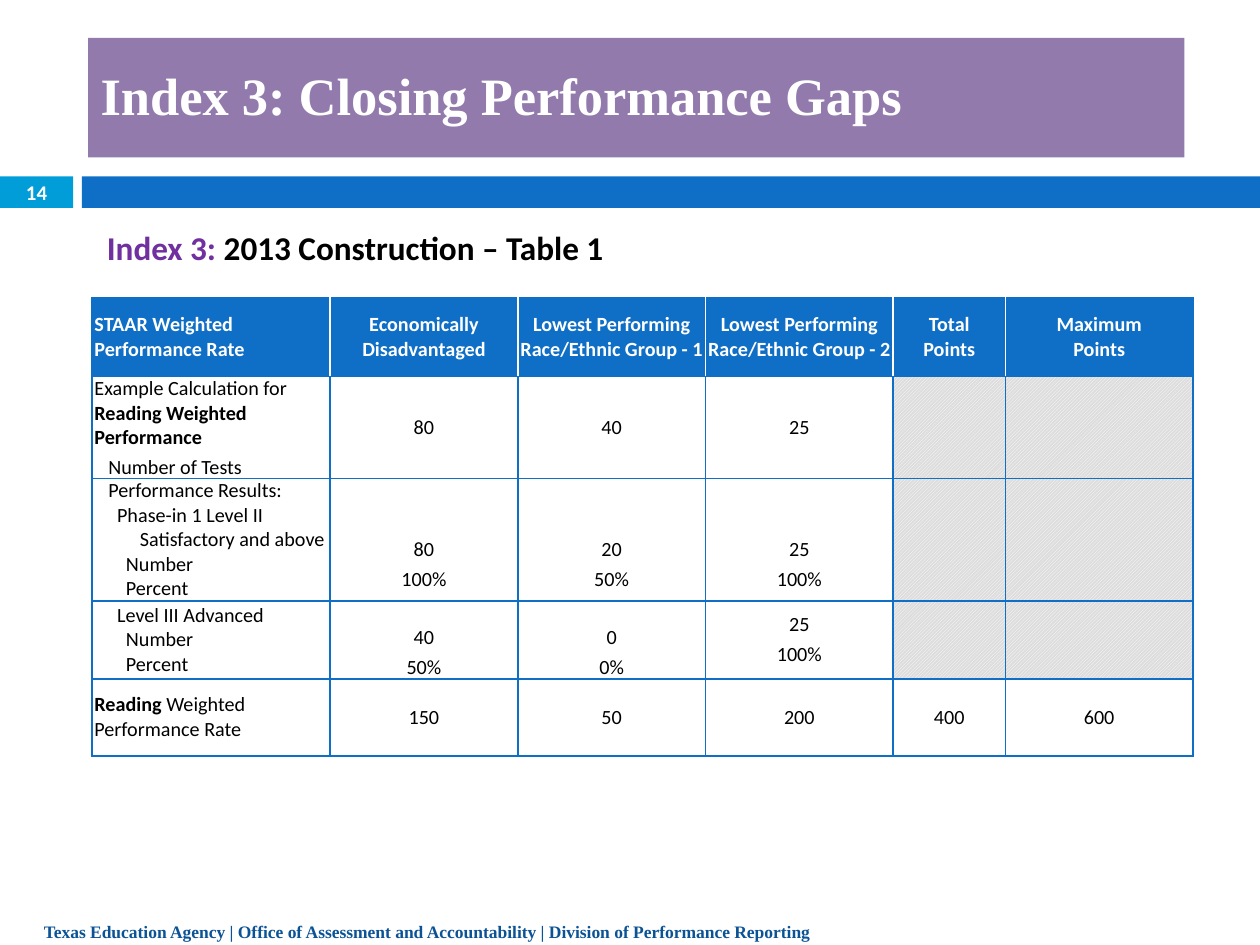
import pptx
import pptx.dml.color
import pptx.enum.dml
import pptx.enum.shapes
import pptx.enum.text
import pptx.oxml.ns
import pptx.util
from lxml import etree

BLUE, CYAN, PURPLE, WHITE, BLACK = "0F6FC6", "009DD9", "927AAD", "FFFFFF", "000000"
SANS, SERIF = "Calibri", "Times New Roman"
LEFT, CENTER = pptx.enum.text.PP_ALIGN.LEFT, pptx.enum.text.PP_ALIGN.CENTER
TOP, MIDDLE = pptx.enum.text.MSO_ANCHOR.TOP, pptx.enum.text.MSO_ANCHOR.MIDDLE


def color(value):
    return pptx.dml.color.RGBColor.from_string(value)


def line(*runs, indent=0, before=0):
    return {"runs": runs, "indent": indent, "before": before}


def centered(*texts):
    return [line((text,), before=3 if i else 0) for i, text in enumerate(texts)]


class SlideBuilder:
    columns, rows = 100, 75
    table_size = 11.5

    def __init__(self, presentation):
        self.column = presentation.slide_width / self.columns
        self.row = presentation.slide_height / self.rows
        self.slide = presentation.slides.add_slide(presentation.slide_layouts[6])

    def box(self, left, top, width, height):
        return (round(left * self.column), round(top * self.row),
                round(width * self.column), round(height * self.row))

    def add_lines(self, frame, lines, size, font, ink, bold=False, align=LEFT, spacing=None):
        frame.word_wrap = True
        for i, content in enumerate(lines):
            paragraph = frame.paragraphs[0] if i == 0 else frame.add_paragraph()
            paragraph.alignment = align
            paragraph.space_before = pptx.util.Pt(content["before"])
            if spacing:
                paragraph.line_spacing = pptx.util.Pt(spacing)
            if content["indent"]:
                indent = round(content["indent"] * self.column)
                paragraph._p.get_or_add_pPr().set("marL", str(indent))
            for text, *style in content["runs"]:
                run = paragraph.add_run()
                run.text = text
                run.font.name, run.font.size = font, pptx.util.Pt(size)
                run.font.bold = bold or "bold" in style
                tints = [item for item in style if item != "bold"]
                run.font.color.rgb = color(tints[0] if tints else ink)

    def bar(self, area, fill):
        shape = self.slide.shapes.add_shape(
            pptx.enum.shapes.MSO_SHAPE.RECTANGLE, *self.box(*area))
        shape.shadow.inherit = False
        shape.fill.solid()
        shape.fill.fore_color.rgb = color(fill)
        shape.line.fill.background()
        shape.text_frame.vertical_anchor = MIDDLE
        return shape.text_frame

    def text(self, area, runs, size, font, ink, anchor=MIDDLE, spacing=None):
        frame = self.slide.shapes.add_textbox(*self.box(*area)).text_frame
        frame.vertical_anchor = anchor
        self.add_lines(frame, [line(*runs)], size, font, ink, True, spacing=spacing)

    def borders(self, cell, sides):
        properties = cell._tc.get_or_add_tcPr()
        for side, ink in sides.items():
            edge = etree.SubElement(
                properties, pptx.oxml.ns.qn("a:ln" + side), w=str(pptx.util.Pt(1)))
            fill = etree.SubElement(edge, pptx.oxml.ns.qn("a:solidFill"))
            etree.SubElement(fill, pptx.oxml.ns.qn("a:srgbClr"), val=ink)

    def cell(self, cell, lines, header, column, last, lead):
        inset = 0.7 if column >= 4 else 0.2
        cell.margin_left = cell.margin_right = round(inset * self.column)
        cell.margin_top, cell.margin_bottom = round(lead * self.row), 0
        cell.vertical_anchor = MIDDLE
        self.borders(cell, {
            "L": WHITE if header and column else BLUE,
            "R": WHITE if header and column < last else BLUE,
            "T": BLUE, "B": BLUE})
        if header:
            cell.fill.solid()
            cell.fill.fore_color.rgb = color(BLUE)
        elif lines:
            cell.fill.background()
        else:
            cell.fill.patterned()
            cell.fill.pattern = pptx.enum.dml.MSO_PATTERN.LIGHT_UPWARD_DIAGONAL
            cell.fill.fore_color.rgb = color(WHITE)
            cell.fill.back_color.rgb = color("DDDDDD")
        self.add_lines(cell.text_frame, lines, self.table_size, SANS,
                       WHITE if header else BLACK, header, CENTER if column else LEFT)

    def table(self, left, top, widths, heights, content, leads):
        area = self.box(left, top, sum(widths), sum(heights))
        table = self.slide.shapes.add_table(len(heights), len(widths), *area).table
        table.horz_banding = False
        for column, width in zip(table.columns, widths):
            column.width = round(width * self.column)
        for row, height in zip(table.rows, heights):
            row.height = round(height * self.row)
        for r, entries in enumerate(content):
            for c, lines in enumerate(entries):
                self.cell(table.cell(r, c), lines, r == 0, c, len(widths) - 1,
                          leads.get((r, c), 0))


def main():
    presentation = pptx.Presentation()
    presentation.slide_width = pptx.util.Inches(10)
    presentation.slide_height = pptx.util.Inches(7.5)
    builder = SlideBuilder(presentation)

    page_number = builder.bar((0, 14, 5.8, 2.5), CYAN)
    page_number.margin_left = page_number.margin_right = 0
    page_number.margin_top = page_number.margin_bottom = 0
    builder.add_lines(page_number, [line(("14",))], 11.9, SANS, WHITE, True, CENTER)
    builder.bar((6.5, 14, 93.5, 2.5), BLUE)
    title = builder.bar((7, 3, 87, 9.5), PURPLE)
    builder.add_lines(title, [line(("Index 3: Closing Performance Gaps",))],
                      30, SERIF, WHITE, True, spacing=32)
    builder.text((7.5, 17.5, 88, 4.2),
                 [("Index 3: ", "7030A0"), ("2013 Construction – Table 1",)],
                 19, SANS, BLACK)

    header = [[line((text,))] for text in (
        "STAAR Weighted Performance Rate", "Economically Disadvantaged",
        "Lowest Performing Race/Ethnic Group - 1",
        "Lowest Performing Race/Ethnic Group - 2", "Total Points")]
    header.append([line(("Maximum",)), line(("Points",))])
    counts = [line(("Number",), indent=2.5), line(("Percent",), indent=2.5)]
    tests = [line(("Example Calculation for ",), ("Reading Weighted Performance", "bold")),
             line(("Number of Tests",), indent=1.1, before=3)]
    satisfactory = [line(("Performance Results:",), indent=1.1),
                    line(("Phase-in 1 Level II",), indent=1.8),
                    line(("Satisfactory and above",), indent=3.6), *counts]
    advanced = [line(("Level III Advanced",), indent=1.8), *counts]
    rate = [line(("Reading", "bold"), (" Weighted Performance Rate",))]
    content = [
        header,
        [tests, centered("80"), centered("40"), centered("25"), [], []],
        [satisfactory, centered("80", "100%"), centered("20", "50%"),
         centered("25", "100%"), [], []],
        [advanced, centered("40", "50%"), centered("0", "0%"),
         centered("25", "100%"), [], []],
        [rate, *(centered(value) for value in ("150", "50", "200", "400", "600"))],
    ]
    text_line = 1.95
    leads = {(2, column): 2 * text_line for column in (1, 2, 3)}
    leads.update({(3, column): text_line for column in (1, 2)})
    builder.table(7.3, 23.6, [18.9, 14.9, 14.9, 14.9, 8.9, 14.9],
                  [6.3, 8, 9.7, 6.1, 6.1], content, leads)

    builder.text((2.5, 70.7, 90, 4.1),
                 [("Texas Education Agency | Office of Assessment and Accountability"
                   " | Division of Performance Reporting",)],
                 10, SERIF, "0B5395", TOP, 26)
    presentation.save("out.pptx")


if __name__ == "__main__":
    main()
